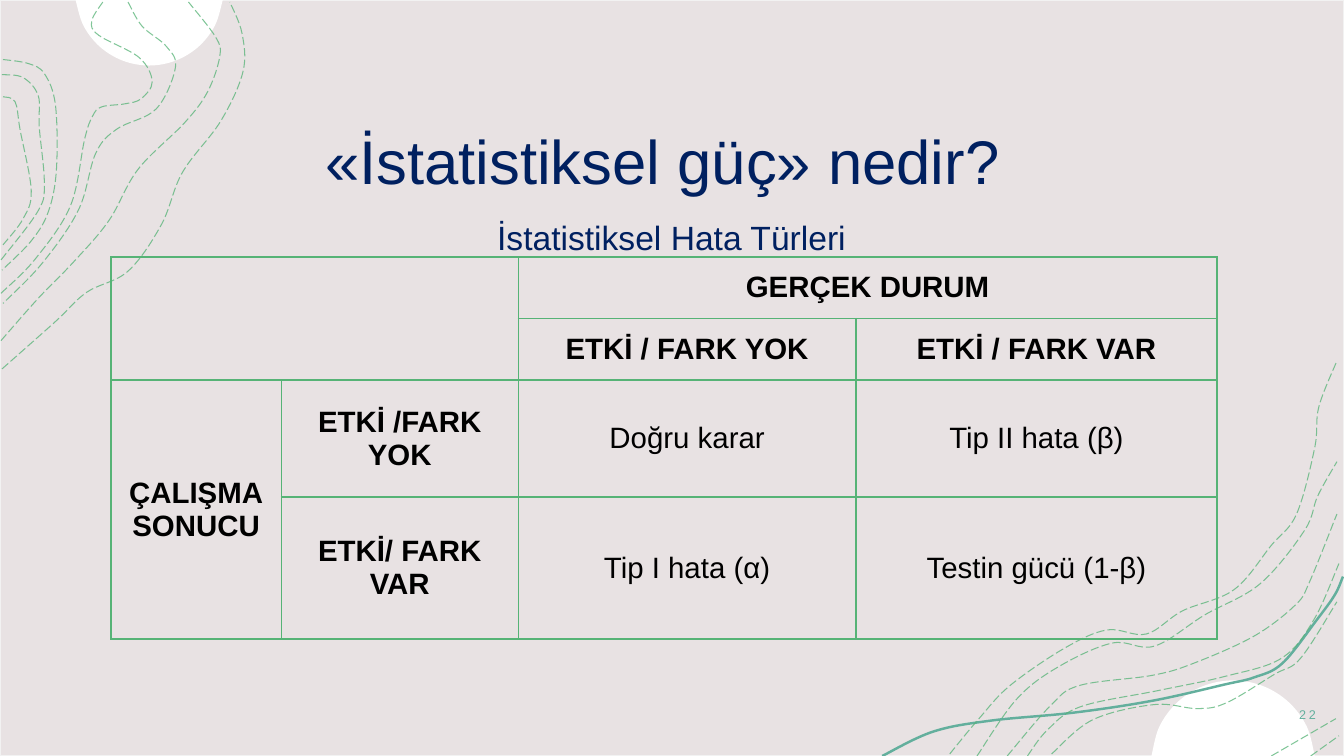
import math

import pptx
import pptx.dml.color
import pptx.enum.dml
import pptx.enum.shapes
import pptx.enum.text
import pptx.oxml
import pptx.util

WIDTH, HEIGHT = 13.33, 7.5
FONT = "Arial"
SAND, WHITE, NAVY, BLACK = "E8E2E3", "FFFFFF", "002060", "000000"
GREEN, TEAL, EDGE = "56B376", "63AF9D", "F2F2F2"
NAMESPACE = 'xmlns:a="http://schemas.openxmlformats.org/drawingml/2006/main"'
ALIGN = pptx.enum.text.PP_ALIGN
ANCHOR = pptx.enum.text.MSO_ANCHOR

# Points in inches that each contour passes through.
LEFT_CONTOURS = [
    [(.02, 3.66), (.55, 3.19), (.86, 2.9), (1.27, 2.69), (1.6, 2.23), (1.81, 1.71),
     (2.19, 1.2), (2.41, .71), (2.4, .33), (2.28, .02)],
    [(.01, 3.38), (.38, 2.96), (.73, 2.6), (1.08, 2.19), (1.37, 1.68), (1.83, 1.22),
     (2.06, .91), (2.18, .56), (2.14, .37), (1.87, .02)],
    [(1.27, .02), (1.41, .26), (1.65, .46), (1.74, .67), (1.55, 1.08), (1.16, 1.28),
     (.95, 1.52), (.78, 2.08), (.42, 2.61), (.03, 3.01)],
    [(.01, 2.91), (.35, 2.57), (.7, 2.04), (.84, 1.38), (.92, 1.15), (1.01, 1.06),
     (1.24, 1.03), (1.4, .98), (1.51, .81), (1.38, .57), (.98, .35), (.91, .21), (1.02, .02)],
    [(.03, .59), (.28, .63), (.44, .73), (.55, 1.04), (.56, 1.68), (.48, 2.1),
     (.31, 2.39), (.02, 2.68)],
    [(.02, .74), (.23, .77), (.38, .95), (.39, 1.26), (.44, 1.81), (.38, 2.09), (.01, 2.58)],
    [(.03, .96), (.15, 1.01), (.2, 1.29), (.31, 1.89), (.23, 2.17), (.03, 2.43)],
]
RIGHT_CONTOURS = [
    [(9.42, 7.48), (9.71, 7.13), (10.02, 6.8), (10.56, 6.43), (10.98, 6.25), (11.37, 6.29),
     (11.73, 6.06), (12.24, 5.85), (12.61, 5.41), (12.86, 5.1), (13.04, 4.44), (13.08, 4.04),
     (13.26, 3.58)],
    [(9.69, 7.5), (10.08, 6.94), (10.49, 6.62), (11.03, 6.38), (11.45, 6.41), (11.95, 6.1),
     (12.5, 5.79), (12.94, 5.26), (13.07, 4.92), (13.26, 4.58)],
    [(13, 7.5), (13.28, 7.3)],
    [(12.61, 7.5), (13.25, 7.13)],
    [(10.43, 7.48), (10.84, 7.14), (11.45, 6.99), (11.88, 7.03), (12.17, 6.97), (12.64, 6.69),
     (12.9, 6.53), (13.26, 5.97)],
    [(10.19, 7.5), (10.39, 7.24), (10.72, 7.01), (11.49, 6.85), (12.15, 6.71), (12.71, 6.53),
     (13.03, 6.15), (13.28, 5.59)],
    [(9.99, 7.5), (10.42, 7), (10.71, 6.8), (11.43, 6.7), (11.84, 6.58), (12.44, 6.31),
     (12.85, 6), (12.99, 5.77), (13.26, 5.1)],
]
WAVE = [(8.75, 7.5), (9.25, 7.26), (9.82, 7.15), (10.65, 7.07), (11.44, 6.95), (12.15, 6.79),
        (12.44, 6.72), (12.72, 6.58), (13.06, 6.15), (13.24, 5.9), (13.32, 5.72)]

# Row, column, rows spanned, columns spanned, bold, lines of text.
ERROR_TYPES = [
    (0, 0, 2, 2, False, []),
    (0, 2, 1, 2, True, ["GERÇEK DURUM"]),
    (1, 2, 1, 1, True, ["ETKİ / FARK YOK"]),
    (1, 3, 1, 1, True, ["ETKİ / FARK VAR"]),
    (2, 0, 2, 1, True, ["ÇALIŞMA", "SONUCU"]),
    (2, 1, 1, 1, True, ["ETKİ /FARK", "YOK"]),
    (2, 2, 1, 1, False, ["Doğru karar"]),
    (2, 3, 1, 1, False, ["Tip II hata (β)"]),
    (3, 1, 1, 1, True, ["ETKİ/ FARK VAR"]),
    (3, 2, 1, 1, False, ["Tip I hata (α)"]),
    (3, 3, 1, 1, False, ["Testin gücü (1-β)"]),
]


def inches(*lengths):
    return [pptx.util.Inches(length) for length in lengths]


def color(hex_string):
    return pptx.dml.color.RGBColor.from_string(hex_string)


def add_text(paragraph, text, size, hex_color, bold=False, align=ALIGN.CENTER, spacing=None):
    paragraph.alignment = align
    run = paragraph.add_run()
    run.text = text
    run.font.name, run.font.size, run.font.bold = FONT, pptx.util.Pt(size), bold
    run.font.color.rgb = color(hex_color)
    if spacing:
        run.font._element.set("spc", str(spacing * 100))


def set_margins(target, horizontal, top, bottom):
    target.margin_left = target.margin_right = pptx.util.Inches(horizontal)
    target.margin_top, target.margin_bottom = inches(top, bottom)


def paint(shape, fill=None, line=None, width=1):
    shape.shadow.inherit = False
    if fill:
        shape.fill.solid()
        shape.fill.fore_color.rgb = color(fill)
    else:
        shape.fill.background()
    if line:
        shape.line.color.rgb = color(line)
        shape.line.width = pptx.util.Pt(width)
    else:
        shape.line.fill.background()


def bend(shape):
    """Turn the straight segments of a freeform into curves through the same points."""
    outline = next(shape.element.iter("{*}path"))
    points = [(int(point.get("x")), int(point.get("y"))) for point in outline.iter("{*}pt")]
    padded = [points[0], *points, points[-1]]
    segments = list(outline.iter("{*}lnTo"))
    for segment, a, b, c, d in zip(segments, padded, padded[1:], padded[2:], padded[3:]):
        leave = [q + (r - p) / 6 for p, q, r in zip(a, b, c)]
        arrive = [r - (s - q) / 6 for q, r, s in zip(b, c, d)]
        controls = "".join(f'<a:pt x="{round(x)}" y="{round(y)}"/>'
                           for x, y in (leave, arrive, c))
        curve = f"<a:cubicBezTo {NAMESPACE}>{controls}</a:cubicBezTo>"
        outline.replace(segment, pptx.oxml.parse_xml(curve))


def add_curve(slide, points, close=False):
    start, *rest = [inches(*point) for point in points]
    builder = slide.shapes.build_freeform(*start)
    builder.add_line_segments(rest, close=close)
    shape = builder.convert_to_shape()
    bend(shape)
    return shape


def add_cap(slide, center, edge, half_width, height, steps=8):
    """Draw the part of a disc that rises from a slide edge; a negative height hangs down."""
    radius = (half_width ** 2 + height ** 2) / (2 * abs(height))
    half_angle = math.acos(1 - abs(height) / radius)
    sign = math.copysign(1, height)
    middle = edge - height + sign * radius
    angles = [half_angle * (2 * step / steps - 1) for step in range(steps + 1)]
    points = [(center + radius * math.sin(angle), middle - sign * radius * math.cos(angle))
              for angle in angles]
    paint(add_curve(slide, points, close=True), fill=WHITE)


def add_backdrop(slide):
    rectangle = pptx.enum.shapes.MSO_SHAPE.RECTANGLE
    paint(slide.shapes.add_shape(rectangle, *inches(0, 0, WIDTH, HEIGHT)), SAND, EDGE)
    add_cap(slide, 1.48, 0, .73, -.65)
    add_cap(slide, 12.23, HEIGHT, .81, .75)
    paint(add_curve(slide, WAVE), line=TEAL, width=1.75)
    for points in LEFT_CONTOURS + RIGHT_CONTOURS:
        contour = add_curve(slide, points)
        paint(contour, line=GREEN, width=.75)
        contour.line.dash_style = pptx.enum.dml.MSO_LINE.LONG_DASH
        tone = next(contour.element.spPr.iter("{*}srgbClr"))
        tone.append(pptx.oxml.parse_xml(f'<a:alpha {NAMESPACE} val="75000"/>'))


def place_title(slide, left, top, width, height):
    title = slide.shapes.title
    title.element.getparent().append(title.element)
    title.left, title.top, title.width, title.height = inches(left, top, width, height)
    frame = title.text_frame
    frame.auto_size = pptx.enum.text.MSO_AUTO_SIZE.NONE
    frame.word_wrap, frame.vertical_anchor = True, ANCHOR.TOP
    set_margins(frame, .13, .2, .13)
    paragraph = frame.paragraphs[0]
    paragraph.line_spacing = 1.5
    add_text(paragraph, "«İstatistiksel güç» nedir? ", 44, NAVY)
    paragraph.add_line_break()
    add_text(paragraph, "İstatistiksel Hata Türleri", 24, NAVY)


def add_page_number(slide, left, top, width, height):
    frame = slide.shapes.add_textbox(*inches(left, top, width, height)).text_frame
    frame.word_wrap, frame.vertical_anchor = True, ANCHOR.MIDDLE
    set_margins(frame, .1, .1, .1)
    add_text(frame.paragraphs[0], "22", 9, TEAL, align=ALIGN.RIGHT, spacing=2)


def add_borders(cell):
    properties = cell._tc.get_or_add_tcPr()
    for position, side in enumerate(("lnL", "lnR", "lnT", "lnB")):
        properties.insert(position, pptx.oxml.parse_xml(
            f'<a:{side} {NAMESPACE} w="12700"><a:solidFill><a:srgbClr val="{GREEN}"/>'
            f'</a:solidFill></a:{side}>'))


def add_error_table(slide, left, top, columns, rows):
    frame = slide.shapes.add_table(len(rows), len(columns),
                                   *inches(left, top, sum(columns), sum(rows)))
    table = frame.table
    table.first_row = table.horz_banding = False
    for column, width in zip(table.columns, inches(*columns)):
        column.width = width
    for row, height in zip(table.rows, inches(*rows)):
        row.height = height
    for cell in table.iter_cells():
        cell.fill.background()
        add_borders(cell)
    for row, column, row_span, column_span, bold, lines in ERROR_TYPES:
        cell = table.cell(row, column)
        if row_span * column_span > 1:
            cell.merge(table.cell(row + row_span - 1, column + column_span - 1))
        cell.vertical_anchor = ANCHOR.MIDDLE
        set_margins(cell, .1, .13, .13)
        for index, line in enumerate(lines):
            text = cell.text_frame
            paragraph = text.add_paragraph() if index else text.paragraphs[0]
            add_text(paragraph, line, 21, BLACK, bold=bold)


def main():
    presentation = pptx.Presentation()
    presentation.slide_width, presentation.slide_height = inches(WIDTH, HEIGHT)
    slide = presentation.slides.add_slide(presentation.slide_layouts[5])
    add_backdrop(slide)
    place_title(slide, .45, .65, 12.42, .84)
    add_page_number(slide, 12.35, 6.8, .8, .57)
    add_error_table(slide, 1.1, 2.55, [1.69, 2.35, 3.35, 3.58], [.61, .61, 1.16, 1.41])
    presentation.save("out.pptx")


if __name__ == "__main__":
    main()
